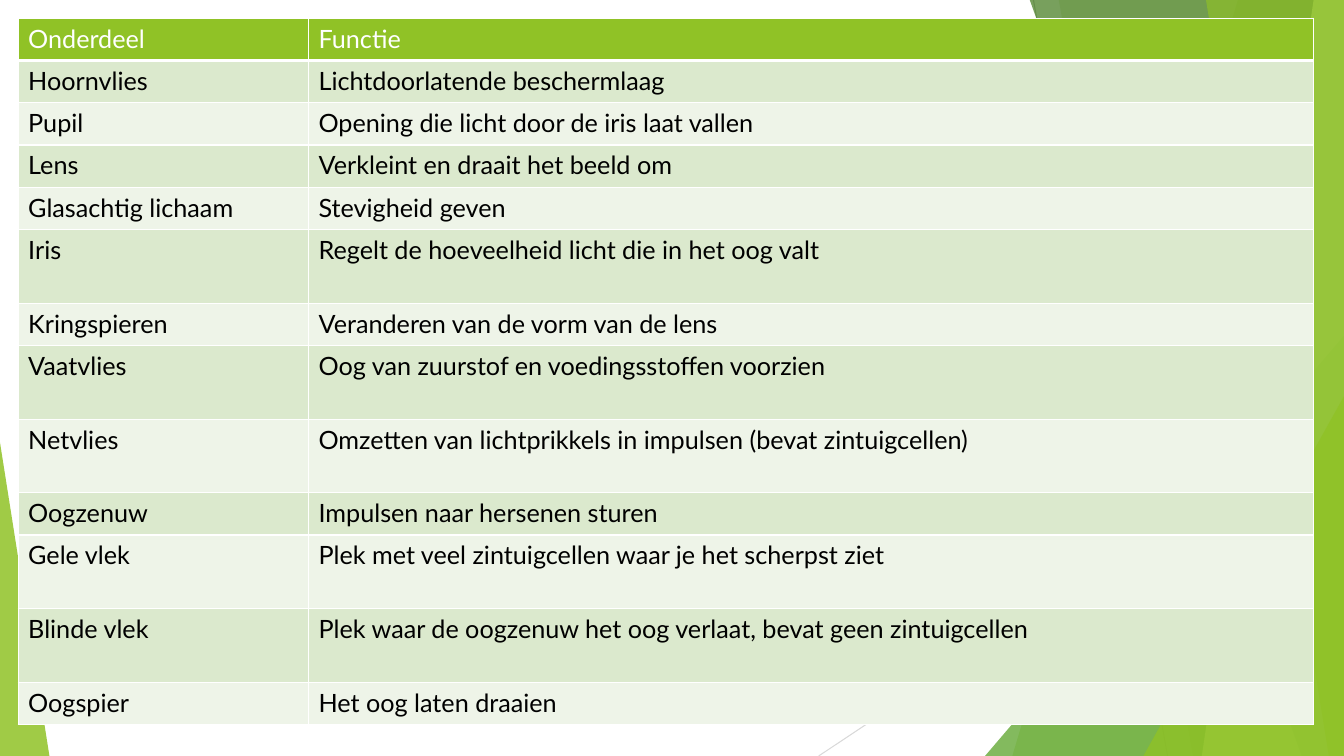
from dataclasses import dataclass

from lxml import etree
from pptx import Presentation
from pptx import util as u
from pptx.dml.color import RGBColor
from pptx.enum import shapes
from pptx.oxml import ns

PX = 9144  # EMU per px, 100 px to the inch
WIDTH, HEIGHT = 1333, 750
FONT = "Lato"
GREEN, WHITE, BLACK = "90C226", "FFFFFF", "000000"
BANDS = ("DBE9CD", "EEF4E8")
LOW, TALL = 42, 73


@dataclass(frozen=True)
class Ray:
    start: tuple[int, int]
    end: tuple[int, int]
    color: str


@dataclass(frozen=True)
class Panel:
    """A band running from its top-left and bottom-left to the right edge."""
    top_left: int
    bottom_left: int
    color: str
    opacity: int


@dataclass(frozen=True)
class Wedge:
    left: int
    top: int
    width: int
    apex: int
    color: str
    opacity: int


@dataclass(frozen=True)
class Part:
    name: str
    function: str
    height: int = LOW


DECORATION = [
    Ray((1025, 0), (1158, 750), "BFBFBF"),
    Ray((1333, 403), (812, 750), "D9D9D9"),
    Panel(1228, 1004, GREEN, 30),
    Panel(1050, 1183, GREEN, 20),
    Wedge(977, 333, 356, 1, "54A021", 72),
    Panel(1021, 1291, "3F7819", 70),
    Panel(1303, 1192, "C0E474", 70),
    Panel(1196, 1318, GREEN, 65),
    Wedge(1134, 393, 199, 1, GREEN, 80),
    Wedge(0, 439, 49, 0, GREEN, 85),
]

PARTS = [
    Part("Onderdeel", "Functie"),
    Part("Hoornvlies", "Lichtdoorlatende beschermlaag"),
    Part("Pupil", "Opening die licht door de iris laat vallen"),
    Part("Lens", "Verkleint en draait het beeld om"),
    Part("Glasachtig lichaam", "Stevigheid geven"),
    Part("Iris", "Regelt de hoeveelheid licht die in het oog valt", TALL),
    Part("Kringspieren", "Veranderen van de vorm van de lens"),
    Part("Vaatvlies", "Oog van zuurstof en voedingsstoffen voorzien", TALL),
    Part("Netvlies", "Omzetten van lichtprikkels in impulsen (bevat zintuigcellen)", TALL),
    Part("Oogzenuw", "Impulsen naar hersenen sturen"),
    Part("Gele vlek", "Plek met veel zintuigcellen waar je het scherpst ziet", TALL),
    Part("Blinde vlek", "Plek waar de oogzenuw het oog verlaat, bevat geen zintuigcellen", TALL),
    Part("Oogspier", "Het oog laten draaien"),
]
COLUMNS = (288, 997)


def px(length: int) -> u.Emu:
    return u.Emu(length * PX)


def rgb(color: str) -> RGBColor:
    return RGBColor.from_string(color)


def paint(shape, color: str, opacity: int) -> None:
    """Give a shape a see-through fill, no outline and no shadow."""
    shape.shadow.inherit = False
    shape.line.fill.background()
    shape.fill.solid()
    shape.fill.fore_color.rgb = rgb(color)
    tint = shape.fill._xPr.find(".//" + ns.qn("a:srgbClr"))
    etree.SubElement(tint, ns.qn("a:alpha"), val=str(opacity * 1000))


def draw_ray(slide, ray: Ray) -> None:
    connector = slide.shapes.add_connector(
        shapes.MSO_CONNECTOR.STRAIGHT, *map(px, ray.start + ray.end))
    connector.line.color.rgb = rgb(ray.color)
    connector.line.width = u.Pt(0.75)
    etree.SubElement(connector._element.spPr, ns.qn("a:effectLst"))


def draw_panel(slide, panel: Panel) -> None:
    builder = slide.shapes.build_freeform(panel.top_left, -1, scale=PX)
    builder.add_line_segments(
        [(WIDTH, -1), (WIDTH, HEIGHT), (panel.bottom_left, HEIGHT)], close=True)
    paint(builder.convert_to_shape(), panel.color, panel.opacity)


def draw_wedge(slide, wedge: Wedge) -> None:
    shape = slide.shapes.add_shape(
        shapes.MSO_SHAPE.ISOSCELES_TRIANGLE, px(wedge.left), px(wedge.top),
        px(wedge.width), px(HEIGHT - wedge.top))
    shape.adjustments[0] = wedge.apex
    paint(shape, wedge.color, wedge.opacity)


def set_borders(cell, bottom: int) -> None:
    """Draw white borders; they come before the fill in the cell properties."""
    properties = cell._tc.get_or_add_tcPr()
    widths = {"a:lnL": 1, "a:lnR": 1, "a:lnT": 1, "a:lnB": bottom}
    for index, (tag, width) in enumerate(widths.items()):
        border = etree.Element(ns.qn(tag), w=str(u.Pt(width)))
        fill = etree.SubElement(border, ns.qn("a:solidFill"))
        etree.SubElement(fill, ns.qn("a:srgbClr"), val=WHITE)
        properties.insert(index, border)


def fill_cell(cell, words: str, row: int) -> None:
    header = row == 0
    cell.text = words
    font = cell.text_frame.paragraphs[0].font
    font.name, font.size, font.bold = FONT, u.Pt(18), False
    font.color.rgb = rgb(WHITE if header else BLACK)
    cell.fill.solid()
    cell.fill.fore_color.rgb = rgb(GREEN if header else BANDS[(row - 1) % 2])
    set_borders(cell, bottom=3 if header else 1)


def draw_table(slide, parts: list[Part]) -> None:
    table = slide.shapes.add_table(
        len(parts), len(COLUMNS), px(18), px(18), px(sum(COLUMNS)),
        px(sum(part.height for part in parts))).table
    for column, width in zip(table.columns, COLUMNS):
        column.width = px(width)
    for row, part in enumerate(parts):
        table.rows[row].height = px(part.height)
        for column, words in enumerate((part.name, part.function)):
            fill_cell(table.cell(row, column), words, row)


def main() -> None:
    presentation = Presentation()
    presentation.slide_width, presentation.slide_height = px(WIDTH), px(HEIGHT)
    slide = presentation.slides.add_slide(presentation.slide_layouts[6])

    # Green facets behind the table
    draw = {Ray: draw_ray, Panel: draw_panel, Wedge: draw_wedge}
    for item in DECORATION:
        draw[type(item)](slide, item)

    # Parts of the eye and what they do
    draw_table(slide, PARTS)
    presentation.save("out.pptx")


if __name__ == "__main__":
    main()
